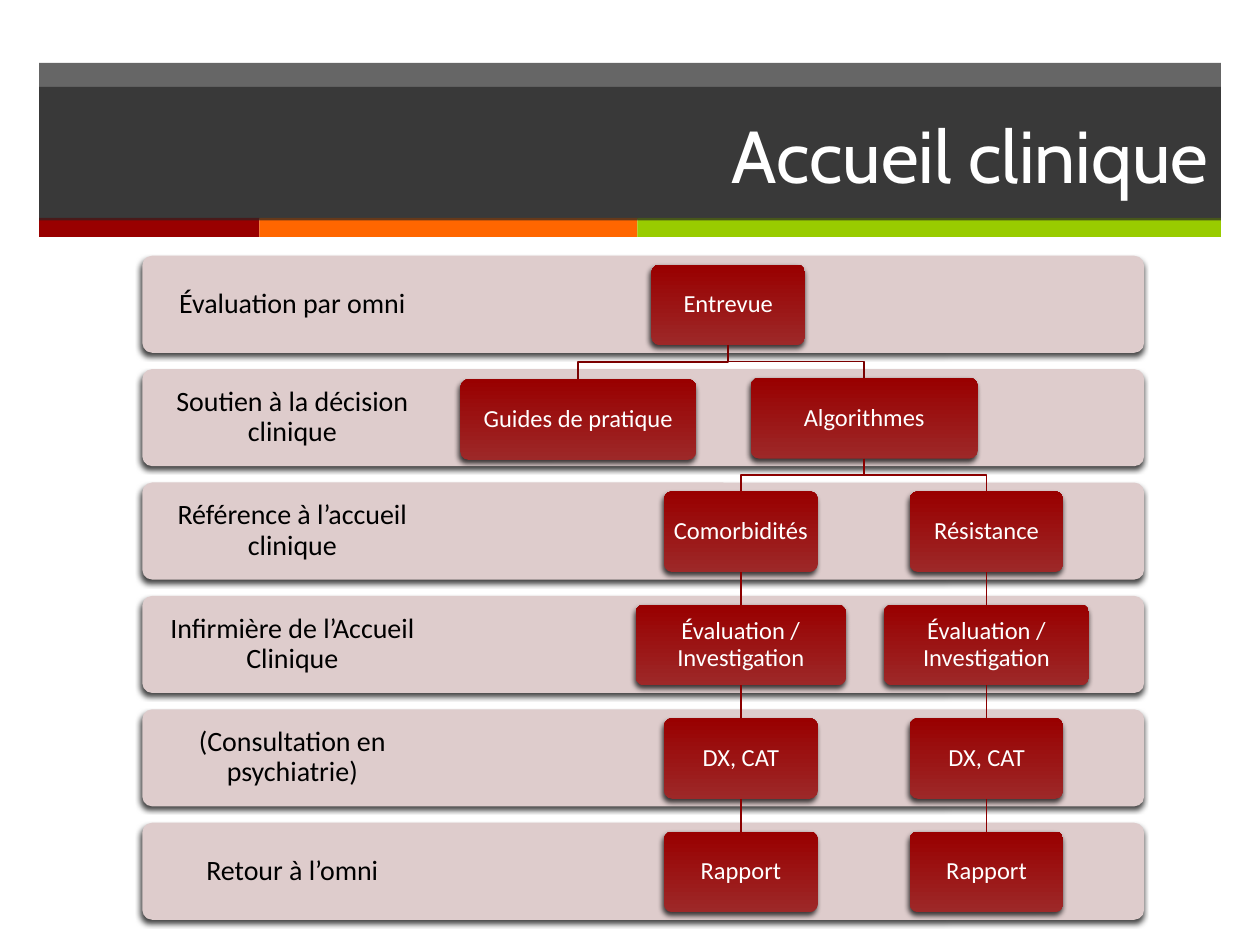
from dataclasses import dataclass
from itertools import accumulate

from lxml.etree import SubElement
from pptx import Presentation
from pptx.dml.color import RGBColor
from pptx.enum.shapes import MSO_CONNECTOR, MSO_SHAPE
from pptx.enum.text import MSO_ANCHOR, PP_ALIGN
from pptx.oxml.ns import qn
from pptx.util import Inches, Pt


@dataclass(frozen=True)
class Theme:
    band: str = "262626"
    band_alpha: int = 70
    stripes: tuple = ("990000", "FF6600", "99CC00")
    row: str = "DECCCC"
    node_top: str = "990000"
    node_bottom: str = "9D2828"
    line_upper: str = "7B0000"
    line_lower: str = "8B0000"
    dark: str = "000000"
    light: str = "FFFFFF"
    title_font: str = "Cabin"
    body_font: str = "Calibri"
    title_size: int = 42
    label_size: int = 16
    node_size: int = 14


THEME = Theme()
BAND_LEFT, BAND_WIDTH = 0.31, 9.38
STRIPE_WIDTHS = (1.75, 3, 4.63)
ROW_LEFT, ROW_TOP, ROW_WIDTH, ROW_HEIGHT, ROW_PITCH = 1.13, 2.03, 7.95, 0.77, 0.9
LABEL_WIDTH = 2.38
NODE_WIDTH, NODE_HEIGHT, NODE_OFFSET = 1.22, 0.64, 0.07

LABELS = (
    "Évaluation par omni",
    "Soutien à la décision clinique",
    "Référence à l’accueil clinique",
    "Infirmière de l’Accueil Clinique",
    "(Consultation en psychiatrie)",
    "Retour à l’omni",
)
BRANCHES = (
    (5.88, "Comorbidités", 1.67),
    (7.83, "Résistance", 1.63),
)


def box(left, top, width, height):
    return [Inches(v) for v in (left, top, width, height)]


def fill_solid(shape, color, alpha=None):
    shape.fill.solid()
    shape.fill.fore_color.rgb = RGBColor.from_string(color)
    if alpha is not None:
        clr = shape.element.spPr.find(qn("a:solidFill"))[0]
        SubElement(clr, qn("a:alpha"), val=str(alpha * 1000))


def add_shadow(shape):
    shape.shadow.inherit = False
    effects = shape.element.spPr.find(qn("a:effectLst"))
    shadow = SubElement(effects, qn("a:outerShdw"), blurRad=str(Pt(3)),
                        dist=str(Pt(2)), dir=str(110 * 60000), rotWithShape="0")
    clr = SubElement(shadow, qn("a:srgbClr"), val=THEME.dark)
    SubElement(clr, qn("a:alpha"), val="75000")


def write_text(shape, text, size, color, font, align=PP_ALIGN.CENTER,
               inset=0.1, spacing=0.9):
    tf = shape.text_frame
    tf.word_wrap = True
    tf.vertical_anchor = MSO_ANCHOR.MIDDLE
    tf.margin_left = tf.margin_right = Inches(inset)
    tf.margin_top = tf.margin_bottom = Inches(inset)
    p = tf.paragraphs[0]
    p.alignment = align
    p.line_spacing = spacing
    r = p.add_run()
    r.text = text
    r.font.size = Pt(size)
    r.font.name = font
    r.font.color.rgb = RGBColor.from_string(color)


def add_bar(s, left, top, width, height, color, alpha=None):
    bar = s.shapes.add_shape(MSO_SHAPE.RECTANGLE, *box(left, top, width, height))
    bar.shadow.inherit = False
    bar.line.fill.background()
    fill_solid(bar, color, alpha)


def add_header(s):
    add_bar(s, BAND_LEFT, 0.5, BAND_WIDTH, 1.24, THEME.band, THEME.band_alpha)
    lefts = accumulate(STRIPE_WIDTHS, initial=BAND_LEFT)
    for left, width, color in zip(lefts, STRIPE_WIDTHS, THEME.stripes):
        add_bar(s, left, 1.73, width, 0.15, color)
    title = s.shapes.title
    title.left, title.top, title.width, title.height = box(
        BAND_LEFT, 0.69, BAND_WIDTH, 1.06)
    fill_solid(title, THEME.band, THEME.band_alpha)
    write_text(title, "Accueil clinique", THEME.title_size, THEME.light,
               THEME.title_font, PP_ALIGN.RIGHT, spacing=1.0)
    title.element.getparent().append(title.element)


def add_card(s, left, top, width, height):
    card = s.shapes.add_shape(MSO_SHAPE.ROUNDED_RECTANGLE,
                              *box(left, top, width, height))
    card.adjustments[0] = 0.1
    card.line.fill.background()
    add_shadow(card)
    return card


def add_row(s, row, label):
    top = ROW_TOP + row * ROW_PITCH
    fill_solid(add_card(s, ROW_LEFT, top, ROW_WIDTH, ROW_HEIGHT), THEME.row)
    tb = s.shapes.add_textbox(*box(ROW_LEFT, top, LABEL_WIDTH, ROW_HEIGHT))
    write_text(tb, label, THEME.label_size, THEME.dark, THEME.body_font, inset=0.12)


def add_node(s, row, center, text, width=NODE_WIDTH, drop=0):
    top = ROW_TOP + row * ROW_PITCH + NODE_OFFSET + drop
    node = add_card(s, center - width / 2, top, width, NODE_HEIGHT)
    node.fill.gradient()
    node.fill.gradient_angle = 90
    for stop, color in zip(node.fill.gradient_stops,
                           (THEME.node_bottom, THEME.node_top)):
        stop.color.rgb = RGBColor.from_string(color)
    write_text(node, text, THEME.node_size, THEME.light, THEME.body_font, inset=0.05)
    return node


def style_line(shape, color):
    shape.line.color.rgb = RGBColor.from_string(color)
    shape.line.width = Pt(1)


def add_elbow(s, parent, child, color):
    x1, y1 = parent.left + parent.width // 2, parent.top + parent.height
    x2, y2 = child.left + child.width // 2, child.top
    mid = (y1 + y2) // 2
    fb = s.shapes.build_freeform(x1, y1)
    fb.add_line_segments([(x1, mid), (x2, mid), (x2, y2)], close=False)
    elbow = fb.convert_to_shape()
    elbow.fill.background()
    elbow.shadow.inherit = False
    style_line(elbow, color)


def add_link(s, parent, child, color):
    link = s.shapes.add_connector(MSO_CONNECTOR.STRAIGHT, 0, 0, 0, 0)
    link.begin_connect(parent, 2)
    link.end_connect(child, 0)
    style_line(link, color)
    SubElement(link.element.spPr, qn("a:effectLst"))


def add_branch(s, parent, center, reason, wide):
    node = add_node(s, 2, center, reason)
    add_elbow(s, parent, node, THEME.line_lower)
    steps = (("Évaluation / Investigation", wide),
             ("DX, CAT", NODE_WIDTH), ("Rapport", NODE_WIDTH))
    for row, (text, width) in enumerate(steps, 3):
        child = add_node(s, row, center, text, width)
        add_link(s, node, child, THEME.line_lower)
        node = child


def main():
    prs = Presentation()
    prs.slide_width, prs.slide_height = Inches(10), Inches(7.5)
    s = prs.slides.add_slide(prs.slide_layouts[5])
    add_header(s)
    for row, label in enumerate(LABELS):
        add_row(s, row, label)
    interview = add_node(s, 0, 5.78, "Entrevue")
    guides = add_node(s, 1, 4.59, "Guides de pratique", 1.87, drop=0.01)
    algorithms = add_node(s, 1, 6.86, "Algorithmes", 1.8)
    for child in (guides, algorithms):
        add_elbow(s, interview, child, THEME.line_upper)
    for center, reason, wide in BRANCHES:
        add_branch(s, algorithms, center, reason, wide)
    prs.save("out.pptx")


if __name__ == "__main__":
    main()
